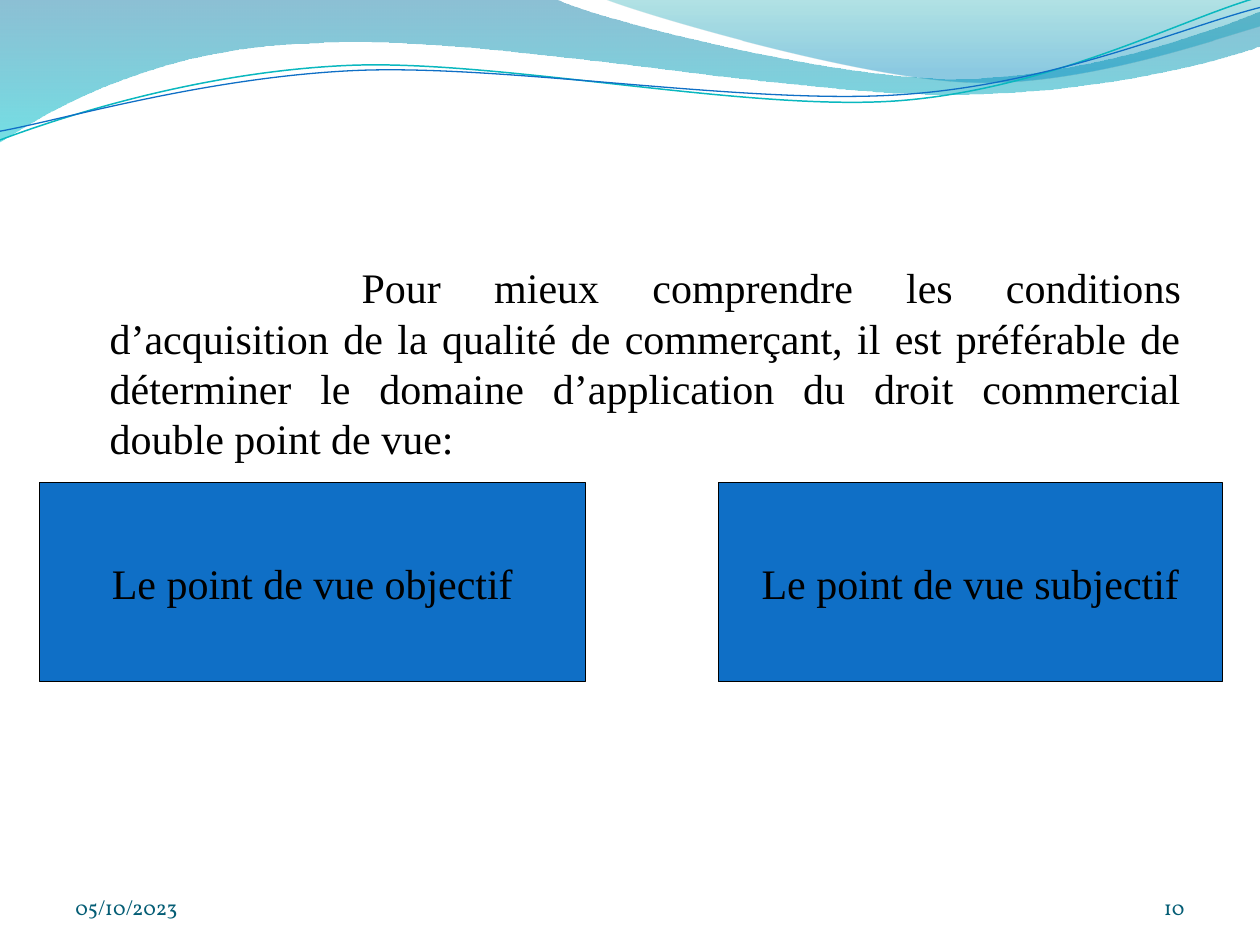
from lxml import etree
from pptx import Presentation
from pptx.dml.color import RGBColor
from pptx.enum import shapes, text
from pptx.oxml import ns
from pptx.util import Pt

SERIF, FOOTER_FONT = "Times New Roman", "Vollkorn"
BLACK, BLUE, TEAL, FOOTER_COLOR = "000000", "0F6FC6", "0AB8BF", "045D75"

# Each wave is a start point followed by lines (2 numbers) and Bézier curves (6), in points.
LEFT_WAVE = [(0, 0), (317, -0.7), (343, 12, 478, 45, 546, 45), (614, 45, 690, 19, 720, 6.5),
             (720.7, 26), (708, 32, 626, 55, 537, 54), (448, 54, 275, 20, 185, 24.5),
             (93, 26, 33, 60, -0.7, 81.4), (0, 0)]
RIGHT_WAVE = [(345, -0.7), (366, 8, 491, 45, 554, 47), (616, 49.7, 692, 23, 720, 15),
              (720, 0), (345, -0.7)]
TEAL_WAVE = [(0, 80), (34.6, 67, 114, 41, 199.4, 37.4), (284.4, 33.8, 427, 64, 513.4, 57.6),
             (600, 51, 675.4, 10.8, 718.6, -1.4)]
BLUE_WAVE = [(0, 75), (33.8, 69, 118, 44, 203.8, 40.3), (290, 36.7, 430, 60.5, 516.2, 54),
             (602, 48.2, 677.5, 15, 720, 4.3)]


def color(hex_value):
    return RGBColor.from_string(hex_value)


def add_wave(slide, segments, close):
    """Draw a freeform through all points, then join the points of each curve."""
    points = [(Pt(segment[i]), Pt(segment[i + 1]))
              for segment in segments for i in range(0, len(segment), 2)]
    builder = slide.shapes.build_freeform(*points[0], scale=1.0)
    builder.add_line_segments(points[1:], close=close)
    wave = builder.convert_to_shape()
    wave.shadow.inherit = False

    steps = iter(list(wave.element.iter(ns.qn("a:lnTo"))))
    for segment in segments[1:]:
        step = next(steps)
        if len(segment) == 6:
            step.tag = ns.qn("a:cubicBezTo")
            for _ in range(2):
                merged = next(steps)
                step.append(merged[0])
                merged.getparent().remove(merged)
    return wave


def add_filled_wave(slide, segments, stops):
    """Stops run from top to bottom: (position, colour, opacity in percent)."""
    wave = add_wave(slide, segments, close=True)
    wave.line.fill.background()
    wave.fill.gradient()
    wave.fill.gradient_angle = 270
    for stop, (position, hex_value, _) in zip(wave.fill.gradient_stops, stops):
        stop.position = position
        stop.color.rgb = color(hex_value)
    for rgb, (_, _, opacity) in zip(wave.element.iter(ns.qn("a:srgbClr")), stops):
        etree.SubElement(rgb, ns.qn("a:alpha")).set("val", str(opacity * 1000))


def add_wave_line(slide, segments, hex_value, width):
    wave = add_wave(slide, segments, close=False)
    wave.fill.background()
    wave.line.color.rgb = color(hex_value)
    wave.line.width = Pt(width)


def write(shape, words, size, font, hex_value, align, anchor, wrap=True):
    frame = shape.text_frame
    frame.word_wrap = wrap
    frame.vertical_anchor = anchor
    paragraph = frame.paragraphs[0]
    paragraph.text = words
    paragraph.alignment = align
    paragraph.font.size = Pt(size)
    paragraph.font.name = font
    paragraph.font.color.rgb = color(hex_value)
    return paragraph


def add_intro(slide, words):
    intro = slide.shapes.add_textbox(Pt(34), Pt(146), Pt(648), Pt(360))
    paragraph = write(intro, words, 24, SERIF, BLACK,
                      text.PP_ALIGN.JUSTIFY, text.MSO_ANCHOR.TOP)
    paragraph.space_before = Pt(2)
    properties = paragraph._p.get_or_add_pPr()
    properties.set("marL", str(Pt(21.6)))
    properties.set("indent", str(Pt(144)))


def add_viewpoint(slide, words, left, width):
    viewpoint = slide.shapes.add_shape(shapes.MSO_SHAPE.RECTANGLE,
                                       Pt(left), Pt(275.8), Pt(width), Pt(113.8))
    viewpoint.shadow.inherit = False
    viewpoint.fill.solid()
    viewpoint.fill.fore_color.rgb = color(BLUE)
    viewpoint.line.color.rgb = color(BLACK)
    viewpoint.line.width = Pt(0.75)
    write(viewpoint, words, 24, SERIF, BLACK,
          text.PP_ALIGN.CENTER, text.MSO_ANCHOR.MIDDLE, wrap=False)


def add_footer(slide, words, left, width, align):
    footer = slide.shapes.add_textbox(Pt(left), Pt(500.5), Pt(width), Pt(28.75))
    write(footer, words, 12, FOOTER_FONT, FOOTER_COLOR, align, text.MSO_ANCHOR.BOTTOM)


def main():
    deck = Presentation()
    deck.slide_width, deck.slide_height = Pt(720), Pt(540)
    slide = deck.slides.add_slide(deck.slide_layouts[6])

    add_filled_wave(slide, LEFT_WAVE, [(0, "0074A1", 45), (1, "00C6CF", 55)])
    add_filled_wave(slide, RIGHT_WAVE, [(0, "00A1A9", 30), (0.8, "008BBF", 45)])
    add_wave_line(slide, TEAL_WAVE, TEAL, 0.85)
    add_wave_line(slide, BLUE_WAVE, BLUE, 0.75)

    add_intro(slide, "Pour mieux comprendre les conditions d’acquisition de la qualité "
                     "de commerçant, il est préférable de déterminer le domaine "
                     "d’application du droit commercial double point de vue:")
    add_footer(slide, "05/10/2023", 36, 168, text.PP_ALIGN.LEFT)
    add_footer(slide, "10", 624, 60, text.PP_ALIGN.RIGHT)
    add_viewpoint(slide, "Le point de vue objectif", 22.5, 312)
    add_viewpoint(slide, "Le point de vue subjectif", 410.5, 288)
    deck.save("out.pptx")


if __name__ == "__main__":
    main()
